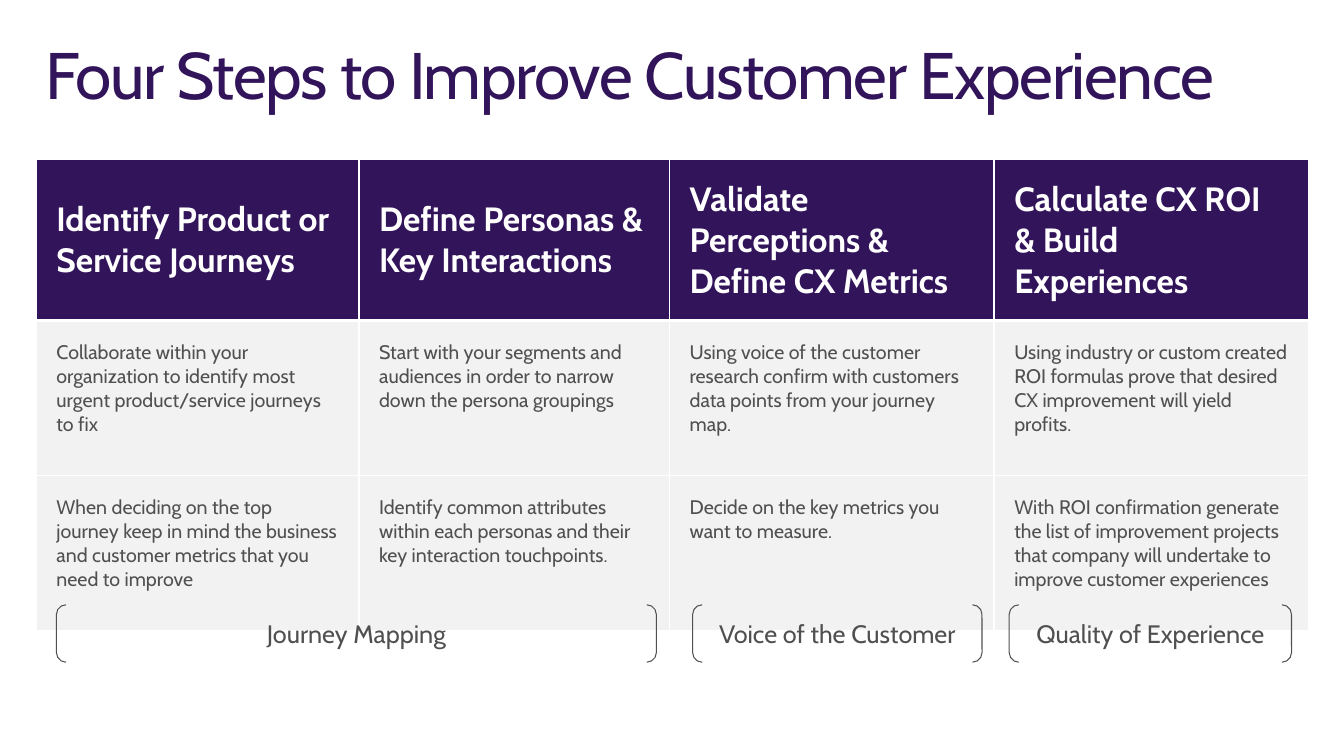
"""Build the slide of four steps to improve customer experience."""
from dataclasses import dataclass

from lxml.etree import SubElement
from pptx import Presentation
from pptx.dml.color import RGBColor
from pptx.enum.shapes import MSO_SHAPE
from pptx.enum.text import MSO_ANCHOR, PP_ALIGN
from pptx.oxml.ns import qn
from pptx.util import Inches, Pt


@dataclass(frozen=True)
class Theme:
    font: str = "Cabin"
    purple: RGBColor = RGBColor(0x32, 0x14, 0x5A)
    gray: RGBColor = RGBColor(0x50, 0x50, 0x50)
    light: RGBColor = RGBColor(0xF2, 0xF2, 0xF2)
    white: RGBColor = RGBColor(0xFF, 0xFF, 0xFF)
    title_size: int = 47
    header_size: int = 24
    bracket_size: int = 18
    body_size: int = 14


theme = Theme()


def format_text(text_frame, size, color, bold=False):
    for paragraph in text_frame.paragraphs:
        for run in paragraph.runs:
            run.font.name = theme.font
            run.font.size = Pt(size)
            run.font.color.rgb = color
            run.font.bold = bold


def add_borders(cell, bottom_width):
    properties = cell._tc.get_or_add_tcPr()
    widths = {"a:lnL": 1, "a:lnR": 1, "a:lnT": 1, "a:lnB": bottom_width}
    for side, width in widths.items():
        line = SubElement(properties, qn(side), w=str(Pt(width)))
        fill = SubElement(line, qn("a:solidFill"))
        SubElement(fill, qn("a:srgbClr"), val=str(theme.white))


presentation = Presentation()
presentation.slide_width = Inches(13.33)
presentation.slide_height = Inches(7.5)
slide = presentation.slides.add_slide(presentation.slide_layouts[6])

title = slide.shapes.add_textbox(Inches(0.29), Inches(0.32), Inches(12.75), Inches(0.98))
title_frame = title.text_frame
title_frame.word_wrap = True
title_frame.margin_left = title_frame.margin_right = Inches(0.16)
title_frame.margin_top = title_frame.margin_bottom = Inches(0.1)
title_frame.text = "Four Steps to Improve Customer Experience"
title_paragraph = title_frame.paragraphs[0]
title_paragraph.line_spacing = 0.9
format_text(title_frame, theme.title_size, theme.purple)
title_paragraph.runs[0].font._element.set("spc", "-100")

steps = [
    (3.2, "Identify Product or Service Journeys",
     "Collaborate within your organization to identify most urgent product/service journeys to fix",
     "When deciding on the top journey keep in mind the business and customer metrics that you need to improve"),
    (3.08, "Define Personas & Key Interactions",
     "Start with your segments and audiences in order to narrow down the persona groupings",
     "Identify common attributes within each personas and their key interaction touchpoints."),
    (3.22, "Validate Perceptions & Define CX Metrics",
     "Using voice of the customer research confirm with customers data points from your journey map.",
     "Decide on the key metrics you want to measure."),
    (3.12, "Calculate CX ROI & Build Experiences",
     "Using industry or custom created ROI formulas prove that desired CX improvement will yield profits.",
     "With ROI confirmation generate the list of improvement projects that company will undertake to "
     "improve customer experiences"),
]
row_heights = [1.58, 1.54, 1.54]

table = slide.shapes.add_table(
    len(row_heights), len(steps), Inches(0.36), Inches(1.58), Inches(12.62), Inches(sum(row_heights))
).table
for row, height in zip(table.rows, row_heights):
    row.height = Inches(height)
for column_index, (width, *texts) in enumerate(steps):
    table.columns[column_index].width = Inches(width)
    for row_index, text in enumerate(texts):
        is_header = row_index == 0
        cell = table.cell(row_index, column_index)
        cell.text_frame.text = text
        cell.margin_left = cell.margin_right = Inches(0.2)
        cell.margin_top = cell.margin_bottom = Inches(0.2)
        cell.vertical_anchor = MSO_ANCHOR.MIDDLE if is_header else MSO_ANCHOR.TOP
        add_borders(cell, 3 if is_header else 1)
        cell.fill.solid()
        cell.fill.fore_color.rgb = theme.purple if is_header else theme.light
        if is_header:
            format_text(cell.text_frame, theme.header_size, theme.white, bold=True)
        else:
            format_text(cell.text_frame, theme.body_size, theme.gray)

brackets = [
    ("Voice of the Customer", 6.87, 2.87),
    ("Journey Mapping", 0.56, 5.95),
    ("Quality of Experience", 10.01, 2.8),
]
for label, left, width in brackets:
    bracket = slide.shapes.add_shape(
        MSO_SHAPE.DOUBLE_BRACKET, Inches(left), Inches(6), Inches(width), Inches(0.57)
    )
    bracket.shadow.inherit = False
    bracket.fill.background()
    bracket.line.color.rgb = theme.gray
    bracket.line.width = Pt(0.75)
    bracket.text_frame.word_wrap = True
    bracket.text_frame.vertical_anchor = MSO_ANCHOR.MIDDLE
    bracket.text_frame.text = label
    bracket.text_frame.paragraphs[0].alignment = PP_ALIGN.CENTER
    format_text(bracket.text_frame, theme.bracket_size, theme.gray)

presentation.save("out.pptx")
